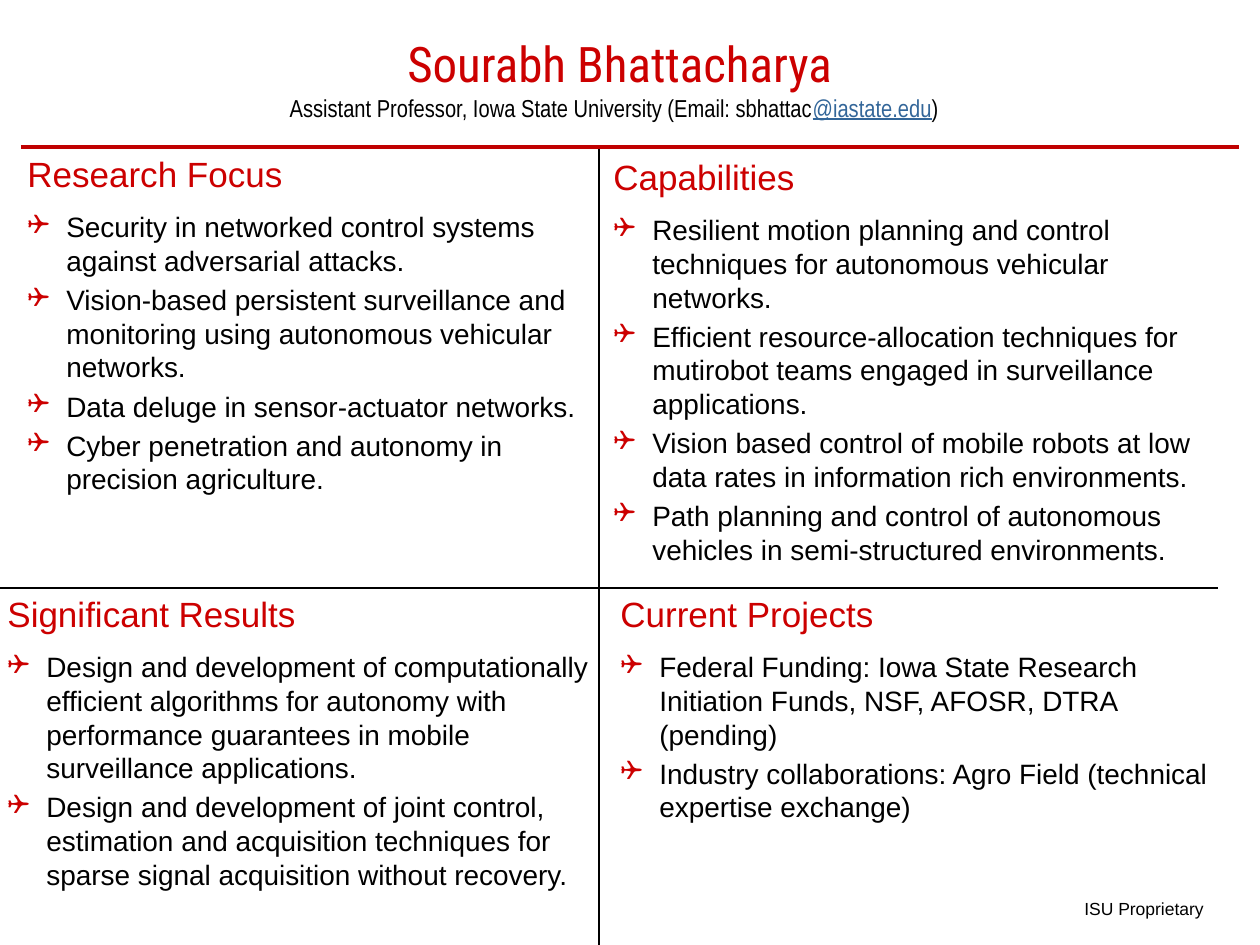
import pptx
import pptx.dml.color
import pptx.enum.shapes
import pptx.enum.text
import pptx.oxml.ns
import pptx.util
from lxml import etree

PX = 914400 / 126

THEME = {
    "red": "CC0000", "rule_red": "C00000", "black": "000000", "link": "336699",
    "body_font": "Arial", "name_font": "Roboto Condensed", "role_font": "Arial Narrow",
    "bullet_font": "Wingdings",
    "name": 28, "role": 14, "heading": 20, "bullet": 16, "footer": 10,
    "rule": 2.25, "divider": 1.5, "indent": 39,
}

HEADER = (31, 10, 1166, 136)
FOOTER = (1072, 892, 146, 34)
CENTER, TOP, MIDDLE = 599, 147, 588

RULES = [
    ((CENTER, TOP), (CENTER, 945), "black", "divider"),
    ((21, TOP), (1239, TOP), "rule_red", "rule"),
    ((0, MIDDLE), (CENTER, MIDDLE), "black", "divider"),
    ((1218, MIDDLE), (CENTER, MIDDLE), "black", "divider"),
]

QUADRANTS = [
    ((15, 146, 577, 399), "Research Focus", [
        "Security in networked control systems against adversarial attacks.",
        "Vision-based persistent surveillance and monitoring using autonomous vehicular networks.",
        "Data deluge in sensor-actuator networks.",
        "Cyber penetration and autonomy in precision agriculture.",
    ]),
    ((601, 149, 640, 398), "Capabilities", [
        "Resilient motion planning and control techniques for autonomous vehicular networks.",
        "Efficient resource-allocation techniques for mutirobot teams engaged in surveillance applications.",
        "Vision based control of mobile robots at low data rates in information rich environments.",
        "Path planning and control of autonomous vehicles in semi-structured environments.",
    ]),
    ((-5, 586, 609, 349), "Significant Results", [
        "Design and development of computationally efficient algorithms for autonomy with "
        "performance guarantees in mobile surveillance applications.",
        "Design and development of joint control, estimation and acquisition techniques for "
        "sparse signal acquisition without recovery.",
    ]),
    ((608, 586, 640, 349), "Current Projects", [
        "Federal Funding: Iowa State Research Initiation Funds, NSF, AFOSR, DTRA (pending)",
        "Industry collaborations: Agro Field (technical expertise exchange)",
    ]),
]


def emu(pixels):
    """Turn a length in px into EMU."""
    return pptx.util.Emu(round(pixels * PX))


def color(name):
    """Look up a theme colour."""
    return pptx.dml.color.RGBColor.from_string(THEME[name])


def apply(target, values):
    """Set every attribute in a dict of format values."""
    for name, value in values.items():
        setattr(target, name, value)


def add_frame(slide, box, **values):
    """Add a text box and return its formatted text frame."""
    frame = slide.shapes.add_textbox(*map(emu, box)).text_frame
    apply(frame, {"word_wrap": True, **values})
    return frame


def add_run(paragraph, text, size, fill="black", font="body_font", **values):
    """Add a run of text in theme type."""
    run = paragraph.add_run()
    run.text = text
    apply(run.font, {"name": THEME[font], "size": pptx.util.Pt(THEME[size]), **values})
    run.font.color.rgb = color(fill)


def add_bullet(paragraph):
    """Give a paragraph a red box bullet and a hanging indent."""
    properties = paragraph._p.get_or_add_pPr()
    indent = emu(THEME["indent"])
    properties.set("marL", str(indent))
    properties.set("indent", str(-indent))
    name = pptx.oxml.ns.qn
    bullet_color = etree.SubElement(properties, name("a:buClr"))
    etree.SubElement(bullet_color, name("a:srgbClr"), val=THEME["red"])
    etree.SubElement(properties, name("a:buFont"), typeface=THEME["bullet_font"])
    etree.SubElement(properties, name("a:buChar"), char="❑")


def add_header(slide, box):
    """Place the name and the role centred in the box."""
    frame = add_frame(slide, box, vertical_anchor=pptx.enum.text.MSO_ANCHOR.MIDDLE)
    paragraph = frame.paragraphs[0]
    paragraph.alignment = pptx.enum.text.PP_ALIGN.CENTER
    add_run(paragraph, " Sourabh Bhattacharya", "name", "red", "name_font")
    paragraph.add_line_break()
    role = "Assistant Professor, Iowa State University (Email: sbhattac"
    add_run(paragraph, role, "role", font="role_font")
    add_run(paragraph, "@iastate.edu", "role", "link", "role_font", underline=True)
    add_run(paragraph, ")", "role", font="role_font")


def add_quadrant(slide, box, heading, bullets):
    """Place a heading and its bullets in the box."""
    frame = add_frame(slide, box)
    add_run(frame.paragraphs[0], heading, "heading", "red")
    for index, text in enumerate(bullets):
        paragraph = frame.add_paragraph()
        add_bullet(paragraph)
        paragraph.space_before = pptx.util.Pt(3.2 if index else 9)
        add_run(paragraph, text, "bullet")


def add_rule(slide, start, end, fill, width):
    """Draw a straight rule without shadow."""
    straight = pptx.enum.shapes.MSO_CONNECTOR.STRAIGHT
    rule = slide.shapes.add_connector(straight, *map(emu, start + end))
    rule.line.color.rgb = color(fill)
    rule.line.width = pptx.util.Pt(THEME[width])
    etree.SubElement(rule._element.spPr, pptx.oxml.ns.qn("a:effectLst"))


def add_footer(slide, box):
    """Place the ownership note in the box."""
    frame = add_frame(slide, box, word_wrap=False)
    add_run(frame.paragraphs[0], "ISU Proprietary", "footer")


def main():
    """Build and save the presentation."""
    presentation = pptx.Presentation()
    apply(presentation, {"slide_width": emu(1260), "slide_height": emu(945)})
    slide = presentation.slides.add_slide(presentation.slide_layouts[6])
    add_header(slide, HEADER)
    for rule in RULES:
        add_rule(slide, *rule)
    for quadrant in QUADRANTS:
        add_quadrant(slide, *quadrant)
    add_footer(slide, FOOTER)
    presentation.save("out.pptx")


if __name__ == "__main__":
    main()
